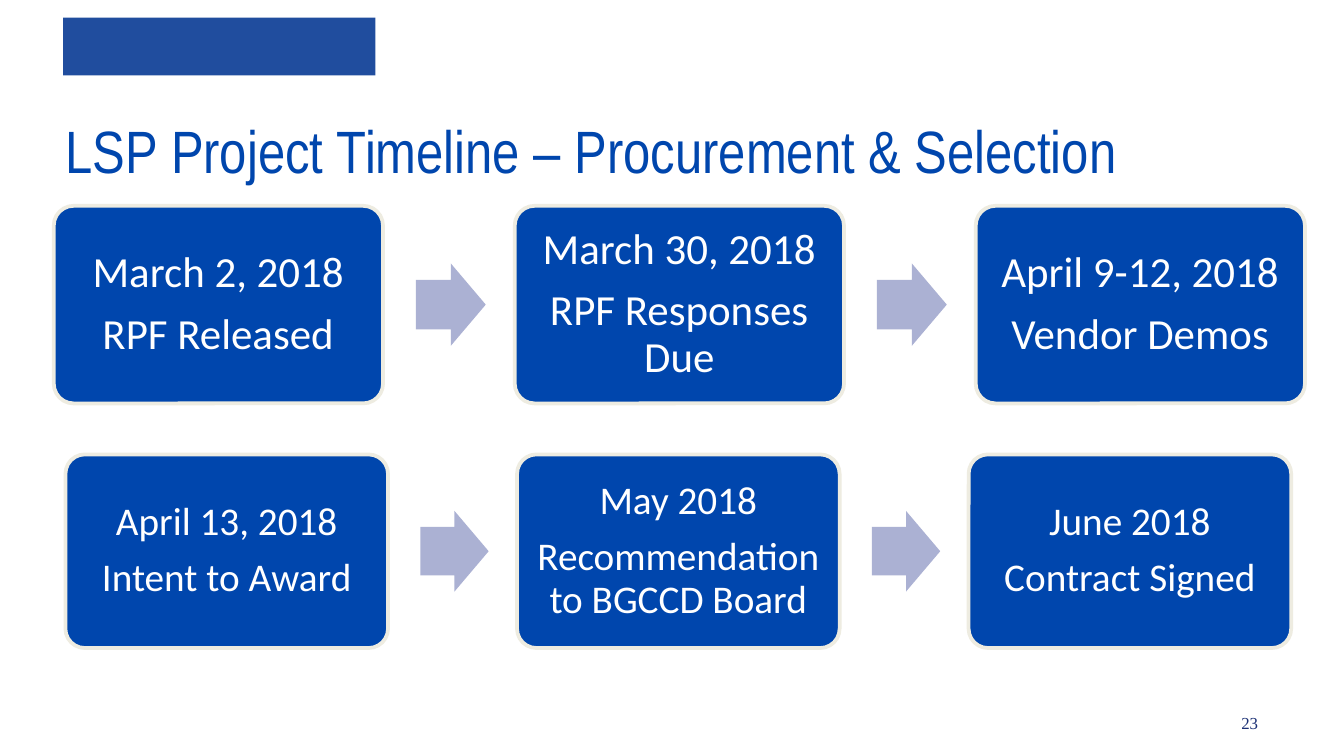
from pptx import Presentation
from pptx.dml.color import RGBColor
from pptx.enum.shapes import MSO_SHAPE
from pptx.enum.text import MSO_ANCHOR, PP_ALIGN
from pptx.util import Pt

RECT, ROUNDED, ARROW = MSO_SHAPE.RECTANGLE, MSO_SHAPE.ROUNDED_RECTANGLE, MSO_SHAPE.RIGHT_ARROW
CENTER, LEFT, RIGHT = PP_ALIGN.CENTER, PP_ALIGN.LEFT, PP_ALIGN.RIGHT
MIDDLE, TOP = MSO_ANCHOR.MIDDLE, MSO_ANCHOR.TOP

BLUE, BANNER_BLUE, NUMBER_BLUE = "0046AD", "204D9E", "1B3075"
ARROW_BLUE, CREAM, WHITE = "ABB1D3", "EEECE1", "FFFFFF"

TITLE = "LSP Project Timeline – Procurement & Selection"
SLIDE_NUMBER = "23"
TIMELINE = [
    {"left": 28.8, "top": 110.3, "step_width": 176.4, "size": 23, "inset": 7.2,
     "steps": [("March 2, 2018", "RPF Released"),
               ("March 30, 2018", "RPF Responses Due"),
               ("April 9-12, 2018", "Vendor Demos")]},
    {"left": 35.1, "top": 243.5, "step_width": 172.8, "size": 21, "inset": 6.5,
     "steps": [("April 13, 2018", "Intent to Award"),
               ("May 2018", "Recommendation to BGCCD Board"),
               ("June 2018", "Contract Signed")]},
]

# Proportions of a timeline row, relative to the width of a step
STEP_HEIGHT, STEP_PITCH = 0.6, 1.4
ARROW_OFFSET, ARROW_WIDTH, ARROW_HEIGHT = 1.1, 0.212, 0.25


def color(hex_value):
    return RGBColor.from_string(hex_value)


def add_filled(slide, kind, left, top, width, height, fill, adjustments=(), line=None):
    shape = slide.shapes.add_shape(kind, Pt(left), Pt(top), Pt(width), Pt(height))
    shape.shadow.inherit = False
    for index, value in enumerate(adjustments):
        shape.adjustments[index] = value
    shape.fill.solid()
    shape.fill.fore_color.rgb = color(fill)
    if line:
        shape.line.color.rgb = color(line)
        shape.line.width = Pt(2)
    else:
        shape.line.fill.background()
    return shape


def write(shape, lines, font, size, hex_value, align, anchor, inset=None, **spacing):
    """Fill a shape with one paragraph per line; inset is in points."""
    frame = shape.text_frame
    frame.word_wrap = True
    frame.vertical_anchor = anchor
    if inset is not None:
        for side in ("left", "top", "right", "bottom"):
            setattr(frame, f"margin_{side}", Pt(inset))
    frame.text = "\n".join(lines)
    for paragraph in frame.paragraphs:
        for name, value in {"alignment": align, **spacing}.items():
            setattr(paragraph, name, value)
        for name, value in {"name": font, "size": Pt(size), "bold": False}.items():
            setattr(paragraph.font, name, value)
        paragraph.font.color.rgb = color(hex_value)


def add_timeline_row(slide, left, top, step_width, size, inset, steps):
    step_height = STEP_HEIGHT * step_width
    arrow_height = ARROW_HEIGHT * step_width
    for index, lines in enumerate(steps):
        step_left = left + index * STEP_PITCH * step_width
        step = add_filled(slide, ROUNDED, step_left, top, step_width, step_height,
                          BLUE, [0.1], CREAM)
        write(step, lines, "Calibri", size, WHITE, CENTER, MIDDLE, inset,
              line_spacing=0.9, space_after=Pt(round(0.35 * size, 1)))
        if index < len(steps) - 1:
            add_filled(slide, ARROW, step_left + ARROW_OFFSET * step_width,
                       top + (step_height - arrow_height) / 2,
                       ARROW_WIDTH * step_width, arrow_height, ARROW_BLUE, [0.6, 0.5])


def main():
    presentation = Presentation()
    presentation.slide_width, presentation.slide_height = Pt(720), Pt(405)
    slide = presentation.slides.add_slide(presentation.slide_layouts[5])

    add_filled(slide, RECT, 33.8, 9.4, 167.4, 31, BANNER_BLUE)

    title = slide.shapes.title
    title.left, title.top, title.width, title.height = Pt(28), Pt(57.6), Pt(682.5), Pt(46)
    write(title, [TITLE], "Arial Narrow", 32, BLUE, LEFT, TOP)

    for row in TIMELINE:
        add_timeline_row(slide, **row)

    number = slide.shapes.add_textbox(Pt(573.8), Pt(378), Pt(107.3), Pt(18))
    write(number, [SLIDE_NUMBER], "Times New Roman", 9, NUMBER_BLUE, RIGHT, TOP)

    presentation.save("out.pptx")


if __name__ == "__main__":
    main()
